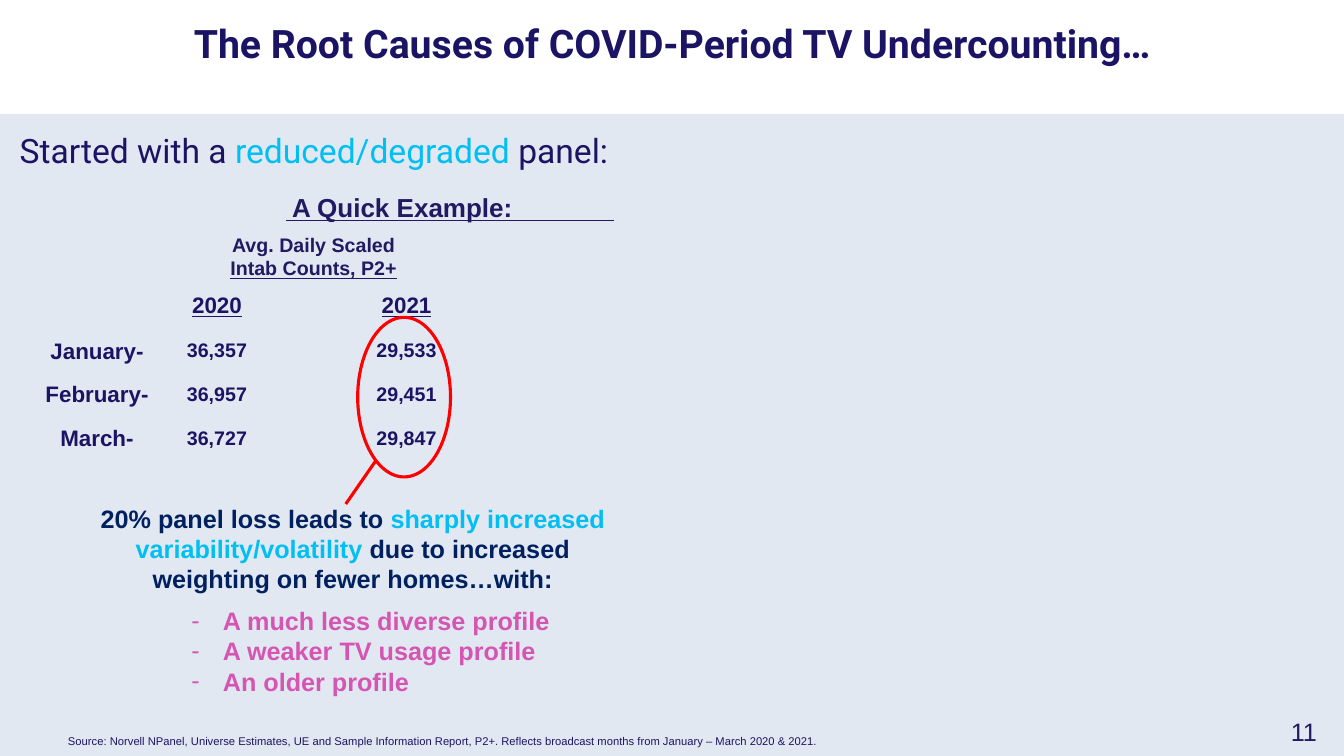
from pptx import Presentation
from pptx.dml.color import RGBColor
from pptx.enum.shapes import MSO_CONNECTOR, MSO_SHAPE
from pptx.enum.text import MSO_ANCHOR, PP_ALIGN
from pptx.oxml.ns import qn
from pptx.util import Pt
from lxml import etree

LEFT, MID = PP_ALIGN.LEFT, PP_ALIGN.CENTER
TOP, CENTRE = MSO_ANCHOR.TOP, MSO_ANCHOR.MIDDLE
RECT, OVAL = MSO_SHAPE.RECTANGLE, MSO_SHAPE.OVAL
LINE = MSO_CONNECTOR.STRAIGHT

THEME = {
    "navy": RGBColor(0x1B, 0x14, 0x64),
    "ink": RGBColor(0x1F, 0x1A, 0x62),
    "deep": RGBColor(0x00, 0x20, 0x60),
    "cyan": RGBColor(0x00, 0xBF, 0xF2),
    "pink": RGBColor(0xD5, 0x55, 0xB3),
    "red": RGBColor(0xFF, 0x00, 0x00),
    "pale": RGBColor(0xE2, 0xE8, 0xF1),
    "title": Pt(28), "lead": Pt(24), "head": Pt(18.6), "body": Pt(18),
    "label": Pt(16), "value": Pt(14), "note": Pt(8),
}

deck = Presentation()
deck.slide_width, deck.slide_height = Pt(960), Pt(540)
slide = deck.slides.add_slide(deck.slide_layouts[6])
shapes = slide.shapes


def write(area, paras, size, align=MID, anchor=TOP, **form):
    """Add a text box; each paragraph is a list of (text, colour, extra format)."""
    box = shapes.add_textbox(*map(Pt, area))
    frame = box.text_frame
    frame.word_wrap = True
    frame.vertical_anchor = anchor
    base = {"name": "Arial", "bold": True, "size": THEME[size]} | form
    for i, runs in enumerate(paras):
        para = frame.paragraphs[0] if i == 0 else frame.add_paragraph()
        para.alignment = align
        for text, hue, *more in runs:
            run = para.add_run()
            run.text = text
            run.font.color.rgb = THEME[hue]
            for key, val in (base | (more[0] if more else {})).items():
                setattr(run.font, key, val)
    return frame


def rule(start, end, hue, width):
    line = shapes.add_connector(LINE, *map(Pt, start + end))
    line.line.color.rgb = THEME[hue]
    line.line.width = Pt(width)
    etree.SubElement(line._element.spPr, qn("a:effectLst"))


# Pale panel below the title
panel = shapes.add_shape(RECT, Pt(0), Pt(82), Pt(960), Pt(458))
panel.shadow.inherit = False
panel.fill.solid()
panel.fill.fore_color.rgb = THEME["pale"]
panel.line.color.rgb = THEME["pale"]
panel.line.width = Pt(1)

# Title and lead line
write((7, 10, 946, 41),
      [[("The Root Causes of COVID-Period TV Undercounting…", "navy")]],
      "title", name="Roboto")
write((7, 89.3, 945, 36),
      [[("Started with a ", "navy"), ("reduced/degraded ", "cyan"),
        ("panel:", "navy")]],
      "lead", LEFT, name="Roboto", bold=False)

# Example heading with its long rule
write((201.6, 133.2, 240, 30), [[("A Quick Example:", "ink")]], "head", LEFT)
rule((204.5, 157.3), (438.5, 157.3), "ink", 1)
write((136, 162.7, 176, 41),
      [[("Avg. Daily Scaled", "ink")],
       [("Intab Counts, P2+", "ink", {"underline": True})]], "value")

# Counts by month and year
months = ["January-", "February-", "March-"]
counts = {"2020": ["36,357", "36,957", "36,727"],
          "2021": ["29,533", "29,451", "29,847"]}
row, step = 237, 31.3
for i, month in enumerate(months):
    write((21.6, row + i * step, 95.4, 27), [[(month, "navy")]], "label")
for col, (year, vals) in enumerate(counts.items()):
    x = 113 + col * 135.4
    write((x, 204.5, 84, 27), [[(year, "navy")]], "label", underline=True)
    for i, val in enumerate(vals):
        write((x, row + 0.8 + i * step, 84, 25), [[(val, "navy")]], "value")

# Ring around 2021 and its pointer
ring = shapes.add_shape(OVAL, Pt(255.5), Pt(226.7), Pt(66.3), Pt(114))
ring.shadow.inherit = False
ring.fill.background()
ring.line.color.rgb = THEME["red"]
ring.line.width = Pt(2.25)
rule((268.5, 329), (247, 360), "red", 2.25)

# Finding and its bullets
write((62, 368, 380, 47.5),
      [[("20% panel loss leads to ", "deep"),
        ("sharply increased variability/volatility", "cyan"),
        (" due to increased weighting on fewer homes…with:", "deep")]],
      "body", anchor=CENTRE)
points = ["A much less diverse profile", "A weaker TV usage profile",
          "An older profile"]
frame = write((129.6, 430.6, 278, 68.4), [[(text, "pink")] for text in points],
              "body", LEFT, CENTRE)
for para in frame.paragraphs:
    props = para._p.get_or_add_pPr()
    props.set("marL", str(Pt(22.5)))
    props.set("indent", str(Pt(-22.5)))
    etree.SubElement(props, qn("a:buFont"), typeface="Arial")
    etree.SubElement(props, qn("a:buChar"), char="-")

# Page number and source
write((908.4, 508.3, 46, 29), [[("11", "ink")]], "body", bold=False)
write((41.5, 521.3, 914, 17),
      [[("Source: Norvell NPanel, Universe Estimates, UE and Sample Information "
         "Report, P2+. Reflects broadcast months from January – March 2020 & 2021.",
         "navy")]],
      "note", LEFT, bold=False)

deck.save("out.pptx")
